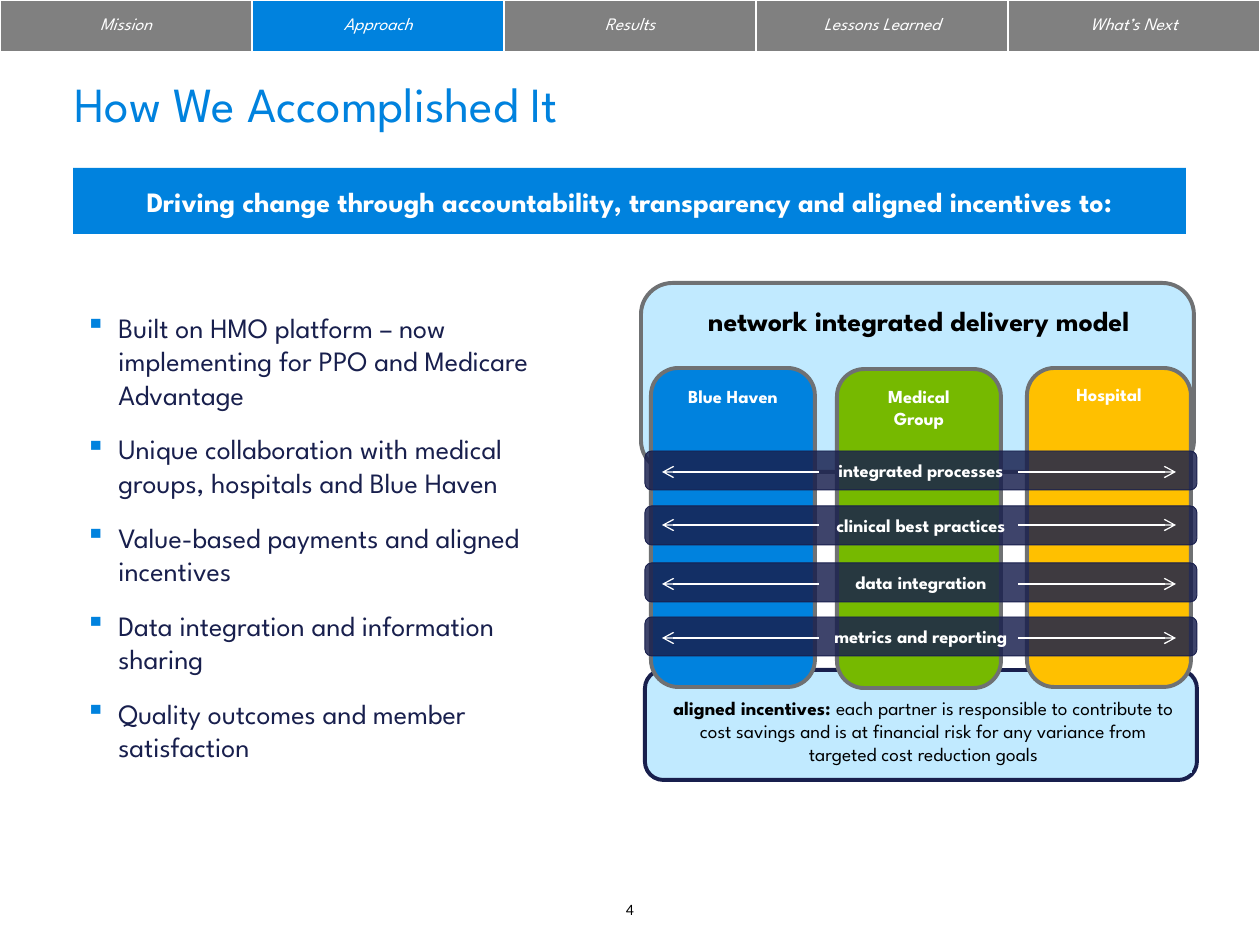
"""Build the slide on how the integrated delivery model was accomplished."""
import pptx
import pptx.dml.color
import pptx.enum.shapes
import pptx.enum.text
import pptx.oxml.ns
import pptx.util
from lxml import etree

PX = 914400 / 126
FONT = "League Spartan"
COLORS = {
    "blue": "0082DE", "navy": "181F4D", "sky": "C1EAFF", "slate": "6F7173",
    "gray": "808080", "green": "76B900", "amber": "FFC000",
    "white": "FFFFFF", "black": "000000",
}
RGB = {k: pptx.dml.color.RGBColor.from_string(v) for k, v in COLORS.items()}
SHAPE = pptx.enum.shapes.MSO_SHAPE
ALIGN = pptx.enum.text.PP_ALIGN
ANCHOR = pptx.enum.text.MSO_ANCHOR
qn = pptx.oxml.ns.qn


def write_text(tf, text, size=10.5, color="white", bold=False, italic=False,
               font=FONT, align=ALIGN.CENTER, anchor=ANCHOR.TOP, bullet=None, gap=0):
    """Fill a text frame; a list gives paragraphs, the part before a tab is bold."""
    tf.word_wrap = True
    tf.vertical_anchor = anchor
    for i, line in enumerate(text if isinstance(text, list) else [text]):
        p = tf.paragraphs[0] if i == 0 else tf.add_paragraph()
        p.alignment = align
        if bullet:
            pPr = p._p.get_or_add_pPr()
            pPr.set("marL", str(round(33 * PX)))
            pPr.set("indent", str(round(-33 * PX)))
            clr = etree.SubElement(pPr, qn("a:buClr"))
            etree.SubElement(clr, qn("a:srgbClr"), val=COLORS["blue"])
            etree.SubElement(pPr, qn("a:buChar"), char=bullet)
        p.space_before = pptx.util.Pt(gap if i else 0)
        parts = line.split("\t")
        for j, part in enumerate(parts):
            r = p.add_run()
            r.text = part
            r.font.name = font
            r.font.size = pptx.util.Pt(size)
            r.font.bold = bold or j < len(parts) - 1
            r.font.italic = italic
            r.font.color.rgb = RGB[color]


def add_box(kind, box, fill, line=None, width=2.25):
    """Add a preset shape at a pixel box with a solid fill and optional outline."""
    sp = s.shapes.add_shape(kind, *[round(v * PX) for v in box])
    sp.shadow.inherit = False
    sp.fill.solid()
    sp.fill.fore_color.rgb = RGB[fill]
    if line:
        sp.line.color.rgb = RGB[line]
        sp.line.width = pptx.util.Pt(width)
    else:
        sp.line.fill.background()
    return sp


prs = pptx.Presentation()
prs.slide_width = round(1260 * PX)
prs.slide_height = round(945 * PX)
s = prs.slides.add_slide(prs.slide_layouts[5])

title = s.shapes.title
title.left, title.top, title.width, title.height = [round(v * PX) for v in (62, 38, 1125, 130)]
write_text(title.text_frame, "How We Accomplished It", size=28, color="blue",
           align=ALIGN.LEFT, anchor=ANCHOR.MIDDLE)

banner = add_box(SHAPE.RECTANGLE, (73, 168, 1113, 66), "blue")
write_text(banner.text_frame,
           "Driving change through accountability, transparency and aligned incentives to:",
           size=16, bold=True, anchor=ANCHOR.MIDDLE)

points = s.shapes.add_textbox(*[round(v * PX) for v in (73, 304, 514, 505)])
write_text(points.text_frame, [
    "Built on HMO platform – now implementing for PPO and Medicare Advantage",
    "Unique collaboration with medical groups, hospitals and Blue Haven",
    "Value-based payments and aligned incentives",
    "Data integration and information sharing",
    "Quality outcomes and member satisfaction",
], size=16, color="navy", align=ALIGN.LEFT, bullet="▪", gap=12)

add_box(SHAPE.ROUNDED_RECTANGLE, (645, 670, 552, 110), "sky", "navy")
incentives = add_box(SHAPE.RECTANGLE, (655, 690, 537, 83), "sky")
write_text(incentives.text_frame,
           "aligned incentives: \teach partner is responsible to contribute to cost savings "
           "and is at financial risk for any variance from targeted cost reduction goals",
           size=11, color="black")

add_box(SHAPE.ROUNDED_RECTANGLE, (641, 283, 553, 189), "sky", "slate")
heading = s.shapes.add_textbox(*[round(v * PX) for v in (664, 297, 510, 49)])
write_text(heading.text_frame, "network integrated delivery model",
           size=16, color="black", bold=True)

partners = [
    ("Hospital", "amber", 1027, 368, 377),
    ("Blue Haven", "blue", 651, 368, 379),
    ("Medical Group", "green", 837, 369, 379),
]
for name, color, left, top, label_top in partners:
    add_box(SHAPE.ROUNDED_RECTANGLE, (left, top, 164, 319), color, "slate")
    label = s.shapes.add_textbox(*[round(v * PX) for v in (left + 18, label_top, 128, 53)])
    write_text(label.text_frame, name, bold=True)

links = [
    ("integrated processes", 451, 472),
    ("clinical best practices", 506, 525),
    ("data integration", 563, 584),
    ("metrics and reporting", 617, 638),
]
for name, top, arrow_y in links:
    bar = add_box(SHAPE.ROUNDED_RECTANGLE, (645, top, 552, 39), "navy", "navy", 0.5)
    rgb = bar.fill._xPr.find(qn("a:solidFill")).find(qn("a:srgbClr"))
    etree.SubElement(rgb, qn("a:alpha"), val="83000")
    write_text(bar.text_frame, name, bold=True, anchor=ANCHOR.MIDDLE)
    for start, end in ((1018, 1176), (819, 662)):
        arrow = s.shapes.add_connector(
            pptx.enum.shapes.MSO_CONNECTOR.STRAIGHT,
            *[round(v * PX) for v in (start, arrow_y, end, arrow_y)])
        arrow.line.color.rgb = RGB["white"]
        arrow.line.width = pptx.util.Pt(0.75)
        etree.SubElement(arrow.line._get_or_add_ln(), qn("a:tailEnd"), type="arrow")
        etree.SubElement(arrow._element.spPr, qn("a:effectLst"))

tabs = ["Mission", "Approach", "Results", "Lessons Learned", "What’s Next"]
frame = s.shapes.add_table(1, len(tabs), 0, 0, prs.slide_width, round(53 * PX))
for i, name in enumerate(tabs):
    cell = frame.table.cell(0, i)
    for side, width in (("L", 1), ("R", 1), ("B", 3)):
        ln = etree.SubElement(cell._tc.get_or_add_tcPr(), qn("a:ln" + side),
                              w=str(pptx.util.Pt(width)))
        solid = etree.SubElement(ln, qn("a:solidFill"))
        etree.SubElement(solid, qn("a:srgbClr"), val=COLORS["white"])
    cell.fill.solid()
    cell.fill.fore_color.rgb = RGB["blue" if name == "Approach" else "gray"]
    write_text(cell.text_frame, name, size=10, italic=True)
    cell.vertical_anchor = ANCHOR.MIDDLE

number = s.shapes.add_textbox(*[round(v * PX) for v in (605, 895, 50, 28)])
write_text(number.text_frame, "4", size=9, color="black", font="Calibri", anchor=ANCHOR.MIDDLE)

prs.save("out.pptx")
